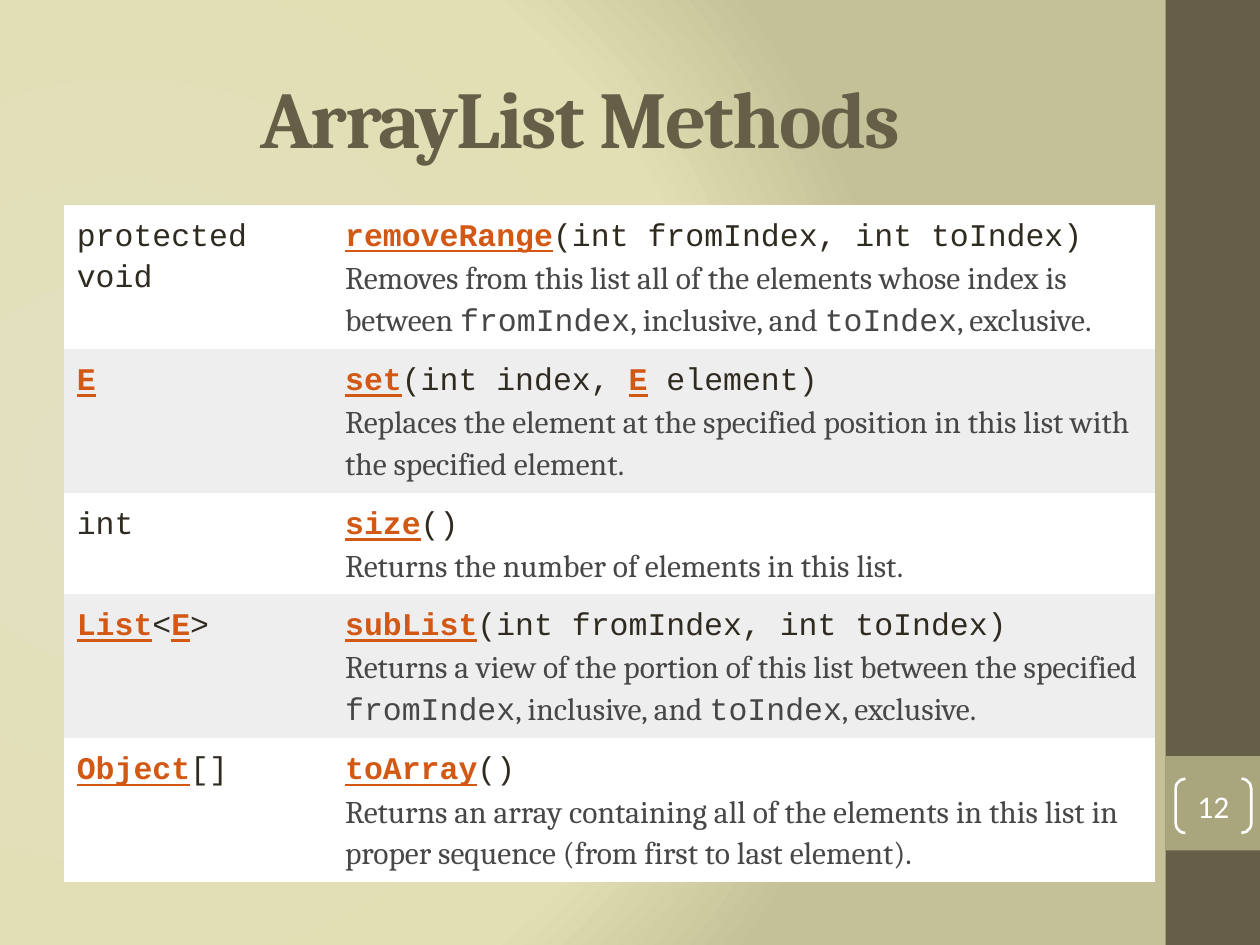
"""Builds the ArrayList Methods slide with its table of method summaries."""
from lxml import etree
from pptx import Presentation
from pptx.dml.color import RGBColor
from pptx.enum.shapes import MSO_SHAPE
from pptx.enum.text import MSO_ANCHOR, PP_ALIGN
from pptx.oxml import parse_xml
from pptx.oxml.ns import qn
from pptx.util import Pt

RECTANGLE, BRACKETS = MSO_SHAPE.RECTANGLE, MSO_SHAPE.DOUBLE_BRACKET
MIDDLE, CENTER = MSO_ANCHOR.MIDDLE, PP_ALIGN.CENTER
DRAWING = "http://schemas.openxmlformats.org/drawingml/2006/main"
NO_STYLE = "{2D5ABB26-0587-4C30-8999-92F81FD0307C}"
STYLES = {
    "title": {"name": "Cambria", "size": Pt(46), "bold": True, "color": "675E47"},
    "number": {"name": "Calibri", "size": Pt(18), "color": "FFFFFF"},
    "link": {"name": "Courier New", "size": Pt(18), "bold": True, "underline": True, "color": "D25814"},
    "code": {"name": "Courier New", "size": Pt(18), "color": "2F2B20"},
    "prose": {"name": "Cambria", "size": Pt(18), "color": "474747"},
    "term": {"name": "Courier New", "size": Pt(18), "color": "474747"},
}
INDEX_RANGE = [("term", "fromIndex"), ("prose", ", inclusive, and "), ("term", "toIndex"), ("prose", ", exclusive.")]
METHODS = [
    ([("code", "protected void")],
     [("link", "removeRange"), ("code", "(int fromIndex, int toIndex)")],
     [("prose", "Removes from this list all of the elements whose index is between "), *INDEX_RANGE]),
    ([("link", "E")],
     [("link", "set"), ("code", "(int index, "), ("link", "E"), ("code", " element)")],
     [("prose", "Replaces the element at the specified position in this list with the specified element.")]),
    ([("code", "int")],
     [("link", "size"), ("code", "()")],
     [("prose", "Returns the number of elements in this list.")]),
    ([("link", "List"), ("code", "<"), ("link", "E"), ("code", ">")],
     [("link", "subList"), ("code", "(int fromIndex, int toIndex)")],
     [("prose", "Returns a view of the portion of this list between the specified "), *INDEX_RANGE]),
    ([("link", "Object"), ("code", "[]")],
     [("link", "toArray"), ("code", "()")],
     [("prose", "Returns an array containing all of the elements in this list in "
                "proper sequence (from first to last element).")]),
]
ROW_HEIGHTS = [79.5, 79.5, 55.5, 79.5, 79.5]


def rgb(value):
    return RGBColor.from_string(value)


def add_span(para, style, text):
    span = para.add_run()
    span.text = text
    for key, value in STYLES[style].items():
        if key == "color":
            span.font.color.rgb = rgb(value)
        else:
            setattr(span.font, key, value)
    return span


deck = Presentation()
deck.slide_width, deck.slide_height = Pt(720), Pt(540)
page = deck.slides.add_slide(deck.slide_layouts[6])

page.background.fill.gradient()
gradient = next(page.element.iter(qn("a:gradFill")))
stops = "".join(
    f'<a:gs pos="{position * 1000}"><a:srgbClr val="{color}"/></a:gs>'
    for position, color in [(0, "E2E0C0"), (75, "E2DFB4"), (100, "C4C198")]
)
gradient.getparent().replace(gradient, parse_xml(
    f'<a:gradFill xmlns:a="{DRAWING}" rotWithShape="1"><a:gsLst>{stops}</a:gsLst><a:path path="circle">'
    '<a:fillToRect l="20000" t="50000" r="100000" b="50000"/></a:path></a:gradFill>'
))

for top, height, color in [(0, 540, "675E47"), (432, 54, "A9A57C")]:
    band = page.shapes.add_shape(RECTANGLE, Pt(666), Pt(top), Pt(54), Pt(height))
    band.shadow.inherit = False
    band.fill.solid()
    band.fill.fore_color.rgb = rgb(color)
    band.line.fill.background()

title = page.shapes.add_textbox(Pt(36), Pt(21.6), Pt(600), Pt(90))
title.text_frame.word_wrap = True
title.text_frame.vertical_anchor = MIDDLE
title_para = title.text_frame.paragraphs[0]
title_para.alignment = CENTER
title_span = add_span(title_para, "title", "ArrayList Methods ")
title_span.font._element.set("spc", "-100")

table_frame = page.shapes.add_table(
    len(METHODS), 2, Pt(36.72), Pt(116.9), Pt(623.5), Pt(sum(ROW_HEIGHTS)))
table = table_frame.table
table.first_row = table.horz_banding = False
next(table_frame._element.iter(qn("a:tableStyleId"))).text = NO_STYLE
for column, width in zip(table.columns, [153.3, 470.2]):
    column.width = Pt(width)

for index, (returns, signature, summary) in enumerate(METHODS):
    table.rows[index].height = Pt(ROW_HEIGHTS[index])
    for cell, lines in zip(table.rows[index].cells, [[returns], [signature, summary]]):
        cell.fill.solid()
        cell.fill.fore_color.rgb = rgb("EEEEEF" if index % 2 else "FFFFFF")
        margins = {"margin_left": 7.2, "margin_top": 5.76, "margin_right": 0, "margin_bottom": 2.16}
        for key, value in margins.items():
            setattr(cell, key, Pt(value))
        for number, line in enumerate(lines):
            para = cell.text_frame.add_paragraph() if number else cell.text_frame.paragraphs[0]
            para.line_spacing = 1.15
            para.space_after = Pt(1.5 * number)
            for style, text in line:
                add_span(para, style, text)

badge = page.shapes.add_shape(BRACKETS, Pt(671.8), Pt(445), Pt(43.2), Pt(31))
badge.adjustments[0] = 0.18
badge.shadow.inherit = False
badge.fill.background()
badge.line.color.rgb = rgb("FFFFFF")
badge.line.width = Pt(1.5)
badge_text = badge.text_frame
for side in ["left", "top", "right", "bottom"]:
    setattr(badge_text, f"margin_{side}", 0)
badge_text.vertical_anchor = MIDDLE
badge_text.paragraphs[0].alignment = CENTER
add_span(badge_text.paragraphs[0], "number", "12")

etree.cleanup_namespaces(page.element.find(qn("p:cSld")).find(qn("p:bg")))
deck.save("out.pptx")
